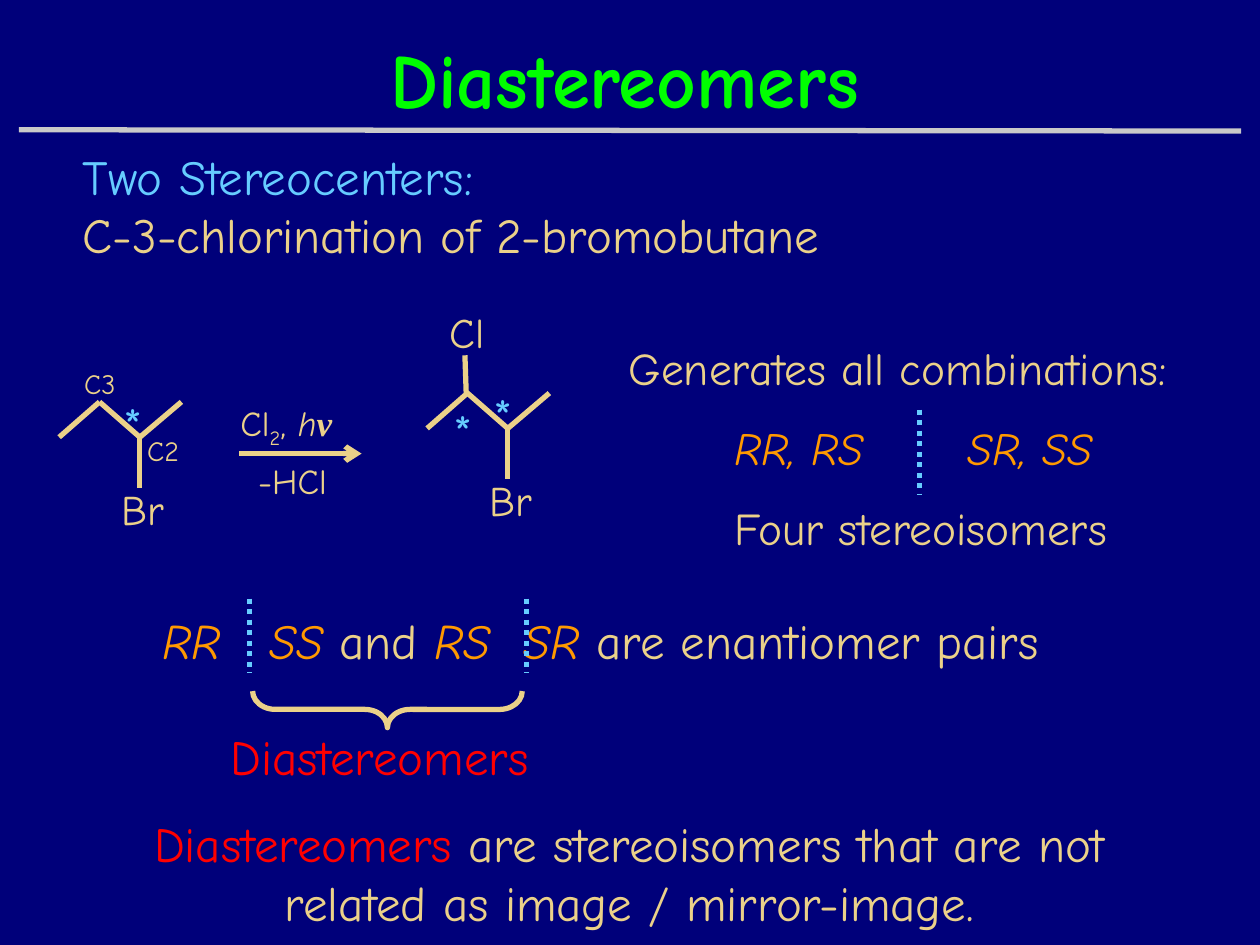
from lxml import etree
from pptx import Presentation
from pptx.dml.color import RGBColor
from pptx.enum.dml import MSO_LINE
from pptx.enum.shapes import MSO_CONNECTOR, MSO_SHAPE
from pptx.enum.text import MSO_ANCHOR, PP_ALIGN
from pptx.oxml.ns import qn
from pptx.util import Inches, Pt

STRAIGHT = MSO_CONNECTOR.STRAIGHT
BRACE = MSO_SHAPE.RIGHT_BRACE
DOTTED = MSO_LINE.ROUND_DOT
LEFT, CENTER = PP_ALIGN.LEFT, PP_ALIGN.CENTER
TOP, MIDDLE = MSO_ANCHOR.TOP, MSO_ANCHOR.MIDDLE

COLORS = {
    "navy": "00007A", "sand": "EBD189", "sky": "66CCFF", "orange": "FF9900",
    "red": "FF0000", "green": "00FF00", "silver": "C9C9C9",
}
COLUMNS, ROWS = 100, 75
FONT = "Comic Neue"


class SlideStyle:
    """Draws on one slide; lengths are columns and rows of a 100 x 75 grid."""

    def __init__(self, deck):
        self.cell = deck.slide_width / COLUMNS
        self.page = deck.slides.add_slide(deck.slide_layouts[6])
        fill = self.page.background.fill
        fill.solid()
        fill.fore_color.rgb = self.color("navy")

    def color(self, name):
        return RGBColor.from_string(COLORS[name])

    def grid(self, *lengths):
        return [round(length * self.cell) for length in lengths]

    def text(self, place, paragraphs, size, align=LEFT, anchor=TOP, gap=0,
             tabs=(), wrap=True):
        """Each paragraph is a list of (text, color, extra font values)."""
        box = self.page.shapes.add_textbox(*self.grid(*place))
        frame = box.text_frame
        frame.word_wrap = wrap
        frame.vertical_anchor = anchor
        for index, spans in enumerate(paragraphs):
            para = frame.paragraphs[0] if index == 0 else frame.add_paragraph()
            if tabs:
                stops = etree.SubElement(para._p.get_or_add_pPr(), qn("a:tabLst"))
                for stop in self.grid(*tabs):
                    etree.SubElement(stops, qn("a:tab"), pos=str(stop), algn="l")
            para.alignment = align
            if index:
                para.space_before = Pt(gap)
            for words, color, *extra in spans:
                self.span(para, words, size, color, *extra)
        return box

    def span(self, para, words, size, color, extra=None):
        span = para.add_run()
        span.text = words
        values = {"name": FONT, "size": Pt(size), **(extra or {})}
        baseline = values.pop("baseline", None)
        for key, value in values.items():
            setattr(span.font, key, value)
        span.font.color.rgb = self.color(color)
        if baseline:
            span._r.get_or_add_rPr().set("baseline", str(baseline))

    def label(self, x, y, words, size=24, color="sand", width=6.6, wrap=True):
        self.text((x, y, width, size * 0.2), [[(words, color)]], size, wrap=wrap)

    def line(self, start, end, color="sand", dash=None, arrow=False):
        line = self.page.shapes.add_connector(STRAIGHT, *self.grid(*start, *end))
        self.outline(line, color)
        if dash:
            line.line.dash_style = dash
        if arrow:
            etree.SubElement(line.line._get_or_add_ln(), qn("a:tailEnd"), type="arrow")
        etree.SubElement(line._element.spPr, qn("a:effectLst"))

    def outline(self, shape, color):
        shape.line.color.rgb = self.color(color)
        shape.line.width = Pt(3)

    def mirror(self, x, top, bottom):
        self.line((x, top), (x, bottom), "sky", DOTTED)

    def brace(self, place, depth):
        brace = self.page.shapes.add_shape(BRACE, *self.grid(*place))
        brace.rotation = 90
        brace.adjustments[0] = depth
        brace.fill.background()
        brace.shadow.inherit = False
        self.outline(brace, "sand")

    def bromobutane(self, x, y):
        """Zigzag of four carbons with bromine below the third."""
        chain = [(x, y), (x + 3.2, y - 2.8), (x + 6.4, y), (x + 9.7, y - 2.8)]
        for start, end in zip(chain, chain[1:]):
            self.line(start, end)
        self.line((x + 6.4, y - 0.2), (x + 6.4, y + 4))
        self.label(x + 4, y + 3.2, "Br")


def main():
    deck = Presentation()
    deck.slide_width, deck.slide_height = Inches(10), Inches(7.5)
    slide = SlideStyle(deck)
    italic = {"italic": True}

    # Title and rule
    slide.text((7.1, 1.6, 85, 9.1), [[("Diastereomers", "green", {"bold": True})]],
               44, CENTER, MIDDLE)
    slide.line((1.5, 10.3), (98.5, 10.4), "silver")

    # Topic
    slide.text((5.6, 11.1, 88.8, 10.4), [
        [("Two Stereocenters:", "sky")],
        [("C-3-chlorination of 2-bromobutane", "sand")],
    ], 28)

    # Starting material and product
    slide.bromobutane(4.7, 34.7)
    slide.bromobutane(33.9, 34)
    slide.line((37, 31.2), (36.9, 28.2))
    slide.label(34.7, 23.8, "Cl")
    for x, y in ((8.8, 30.8), (38.2, 30.1), (35, 31.4)):
        slide.label(x, y, "*", 28, "sky", 3.6)
    for x, y, carbon in ((10.7, 33.9, "C2"), (5.7, 28.6, "C3")):
        slide.label(x, y, carbon, 16, width=4.7, wrap=False)

    # Reaction arrow with its conditions
    slide.line((19, 36), (28.7, 36), arrow=True)
    slide.text((18.1, 31.4, 10.2, 4.3), [[
        ("Cl", "sand"), ("2", "sand", {"baseline": -25000}), (", ", "sand"),
        ("h", "sand", italic),
        ("ν", "sand", {"name": "Times New Roman", "bold": True, "italic": True}),
    ]], 20)
    slide.label(19.5, 36, "-HCl", 20, width=8.8)

    # Combinations
    box = slide.text((48.9, 26.5, 48.4, 18.5), [
        [("Generates all combinations:", "sand")],
        [("\tRR, RS\tSR, SS", "orange", italic)],
        [("Four stereoisomers", "sand")],
    ], 26, gap=14.5, tabs=(8.4, 26.9))
    box.text_frame.paragraphs[-1].alignment = CENTER
    slide.mirror(73, 32.5, 39.2)

    # Enantiomer pairs, braced as diastereomers
    slide.text((11.9, 48, 76.2, 5.7), [[
        ("RR\tSS ", "orange", italic), ("and ", "sand"),
        ("RS\tSR", "orange", italic), (" are enantiomer pairs", "sand"),
    ]], 28, tabs=(8.5, 28.7))
    for x in (19.8, 41.8):
        slide.mirror(x, 47.5, 53.4)
    slide.brace((29.3, 45.6, 2.9, 21.4), 0.62)
    slide.label(17.3, 57.2, "Diastereomers", 28, "red", 28.8, wrap=False)

    # Definition
    slide.text((6.7, 64.1, 86.5, 10.3), [[
        ("Diastereomers", "red"),
        (" are stereoisomers that are not related as image / mirror-image.", "sand"),
    ]], 28, CENTER)

    deck.save("out.pptx")


if __name__ == "__main__":
    main()
